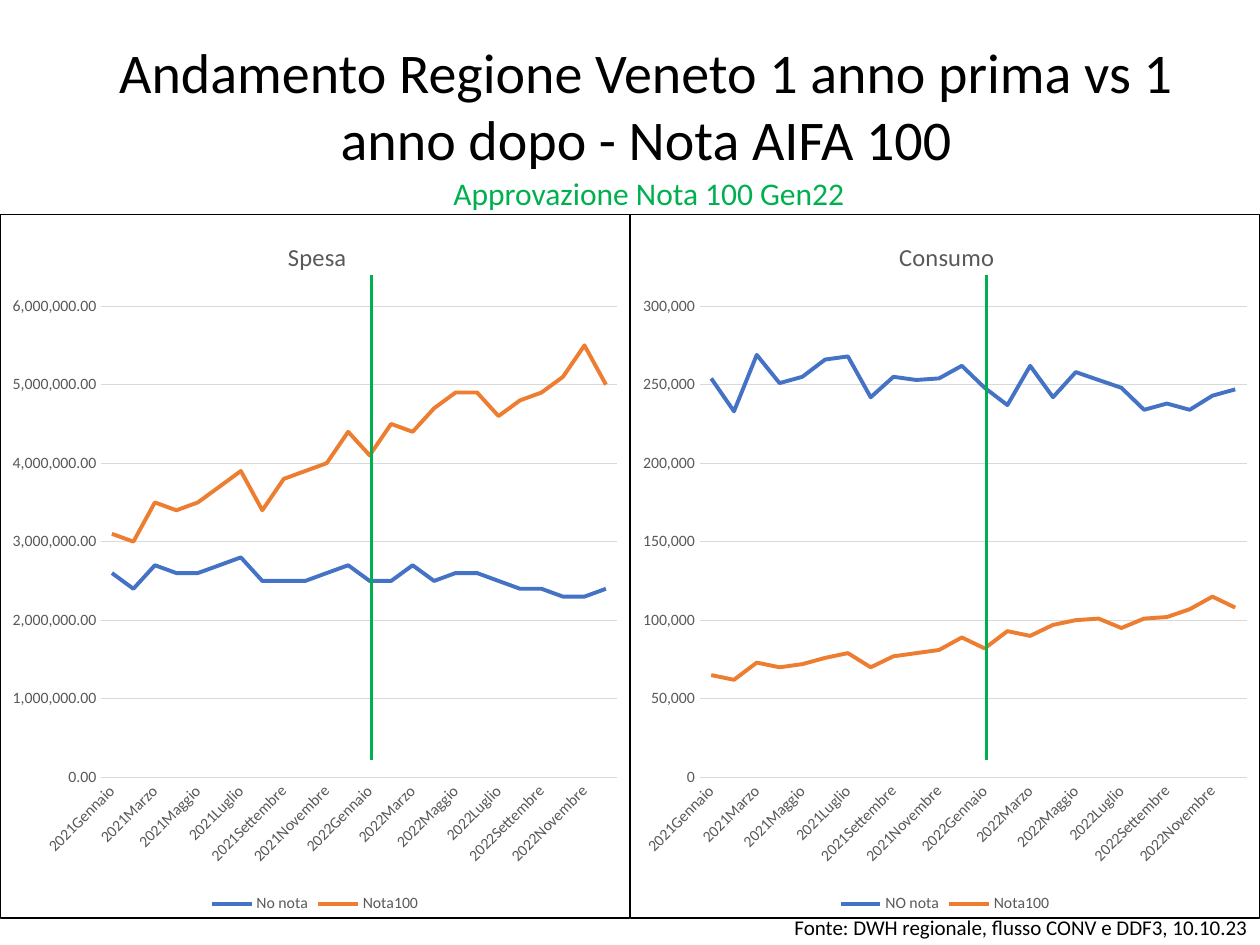
from itertools import product
from lxml.etree import SubElement
from pptx import Presentation
from pptx.chart.data import CategoryChartData
from pptx.dml.color import RGBColor
from pptx.enum.chart import XL_CHART_TYPE, XL_LEGEND_POSITION, XL_MARKER_STYLE, XL_TICK_MARK
from pptx.enum.shapes import MSO_CONNECTOR
from pptx.enum.text import PP_ALIGN
from pptx.oxml import parse_xml
from pptx.oxml.ns import nsdecls, qn
from pptx.util import Inches, Pt

FONT = "Calibri"
HUES = {"ink": "000000", "gray": "595959", "grid": "D9D9D9",
        "blue": "4472C4", "warm": "ED7D31", "mark": "00B050"}
MONTHS = ["Gennaio", "Febbraio", "Marzo", "Aprile", "Maggio", "Giugno", "Luglio",
          "Agosto", "Settembre", "Ottobre", "Novembre", "Dicembre"]
CATS = [f"{year}{month}" for year, month in product((2021, 2022), MONTHS)]
WIDE, TALL = 10, 7.5
HALF, TOP, DEEP = WIDE / 2, 1.7, 5.59

SPEND = {
    "No nota": [26, 24, 27, 26, 26, 27, 28, 25, 25, 25, 26, 27,
                25, 25, 27, 25, 26, 26, 25, 24, 24, 23, 23, 24],
    "Nota100": [31, 30, 35, 34, 35, 37, 39, 34, 38, 39, 40, 44,
                41, 45, 44, 47, 49, 49, 46, 48, 49, 51, 55, 50],
}
USE = {
    "NO nota": [254, 233, 269, 251, 255, 266, 268, 242, 255, 253, 254, 262,
                248, 237, 262, 242, 258, 253, 248, 234, 238, 234, 243, 247],
    "Nota100": [65, 62, 73, 70, 72, 76, 79, 70, 77, 79, 81, 89,
                82, 93, 90, 97, 100, 101, 95, 101, 102, 107, 115, 108],
}


def color(name):
    return RGBColor.from_string(HUES[name])


def style(font, size, hue):
    font.name = FONT
    font.size = Pt(size)
    font.bold = False
    font.color.rgb = color(hue)


def stroke(line, hue, width):
    line.color.rgb = color(hue)
    line.width = Pt(width)


def add_text(slide, box, text, size, hue, align=PP_ALIGN.LEFT):
    frame = slide.shapes.add_textbox(*map(Inches, box)).text_frame
    frame.word_wrap = True
    para = frame.paragraphs[0]
    para.alignment = align
    run = para.add_run()
    run.text = text
    style(run.font, size, hue)


def add_mark(slide, left):
    line = slide.shapes.add_connector(
        MSO_CONNECTOR.STRAIGHT, *map(Inches, (left, 6.03, left, 2.18)))
    stroke(line.line, "mark", 1.5)
    SubElement(line._element.spPr, qn("a:effectLst"))


def place(node, **parts):
    old = node.find(qn("c:layout"))
    if old is not None:
        node.remove(old)
    layout = parse_xml(f"<c:layout {nsdecls('c')}/>")
    spot = SubElement(layout, qn("c:manualLayout"))
    if "w" in parts:
        SubElement(spot, qn("c:layoutTarget")).set("val", "inner")
    for key in ("x", "y"):
        SubElement(spot, qn(f"c:{key}Mode")).set("val", "edge")
    for key, value in parts.items():
        SubElement(spot, qn(f"c:{key}")).set("val", str(value))
    text = node.find(qn("c:tx"))
    node.insert(0 if text is None else 1, layout)


def set_axes(chart, form, peak, step):
    for axis in (chart.category_axis, chart.value_axis):
        axis.major_tick_mark = axis.minor_tick_mark = XL_TICK_MARK.NONE
        style(axis.tick_labels.font, 9, "gray")
    cat, val = chart.category_axis, chart.value_axis
    stroke(cat.format.line, "grid", 0.75)
    cat._element.find(qn("c:txPr")).find(qn("a:bodyPr")).set("rot", "-2700000")
    val.format.line.fill.background()
    stroke(val.major_gridlines.format.line, "grid", 0.75)
    val.minimum_scale, val.maximum_scale, val.major_unit = 0, peak, step
    val.tick_labels.number_format = form
    val.tick_labels.number_format_is_linked = False


def add_lines(slide, col, title, rows, unit, form, peak, step, head, plot):
    data = CategoryChartData()
    data.categories = CATS
    for name, vals in rows.items():
        data.add_series(name, [val * unit for val in vals])
    box = map(Inches, (col * HALF, TOP, HALF, DEEP))
    chart = slide.shapes.add_chart(XL_CHART_TYPE.LINE, *box, data).chart
    style(chart.font, 10, "ink")
    root = chart._chartSpace
    root.find(qn("c:chart")).addnext(parse_xml(
        f'<c:spPr {nsdecls("c", "a")}><a:noFill/><a:ln w="9525"><a:solidFill>'
        f'<a:srgbClr val="{HUES["ink"]}"/></a:solidFill></a:ln></c:spPr>'))
    chart.has_title = True
    run = chart.chart_title.text_frame.paragraphs[0].add_run()
    run.text = title
    style(run.font, 14, "gray")
    place(chart.chart_title._element, x=head, y=0.03)
    place(root.find(qn("c:chart")).find(qn("c:plotArea")),
          x=plot, y=0.13, w=round(0.98 - plot, 2), h=0.67)
    chart.has_legend = True
    chart.legend.position = XL_LEGEND_POSITION.BOTTOM
    chart.legend.include_in_layout = False
    style(chart.legend.font, 9, "gray")
    chart.plots[0].vary_by_categories = False
    for line, hue in zip(chart.plots[0].series, ("blue", "warm")):
        line.smooth = False
        line.marker.style = XL_MARKER_STYLE.NONE
        stroke(line.format.line, hue, 2.25)
    set_axes(chart, form, peak, step)


def main():
    deck = Presentation()
    deck.slide_width, deck.slide_height = Inches(WIDE), Inches(TALL)
    slide = deck.slides.add_slide(deck.slide_layouts[6])
    add_text(slide, (0.67, 0.25, 8.92, 1.08),
             "Andamento Regione Veneto 1 anno prima vs 1 anno dopo - Nota AIFA 100",
             32, "ink", PP_ALIGN.CENTER)
    add_lines(slide, 0, "Spesa", SPEND, 100000, "#,##0.00",
              6000000, 1000000, 0.45, 0.16)
    add_lines(slide, 1, "Consumo", USE, 1000, "#,##0",
              300000, 50000, 0.42, 0.11)
    for left in (2.95, 7.83):
        add_mark(slide, left)
    add_text(slide, (3.5, 1.33, 3.54, 0.4), "Approvazione Nota 100 Gen22",
             18, "mark")
    add_text(slide, (HALF, 7.21, HALF, 0.29),
             "Fonte: DWH regionale, flusso CONV e DDF3, 10.10.23",
             12, "ink", PP_ALIGN.RIGHT)
    deck.save("out.pptx")


if __name__ == "__main__":
    main()
